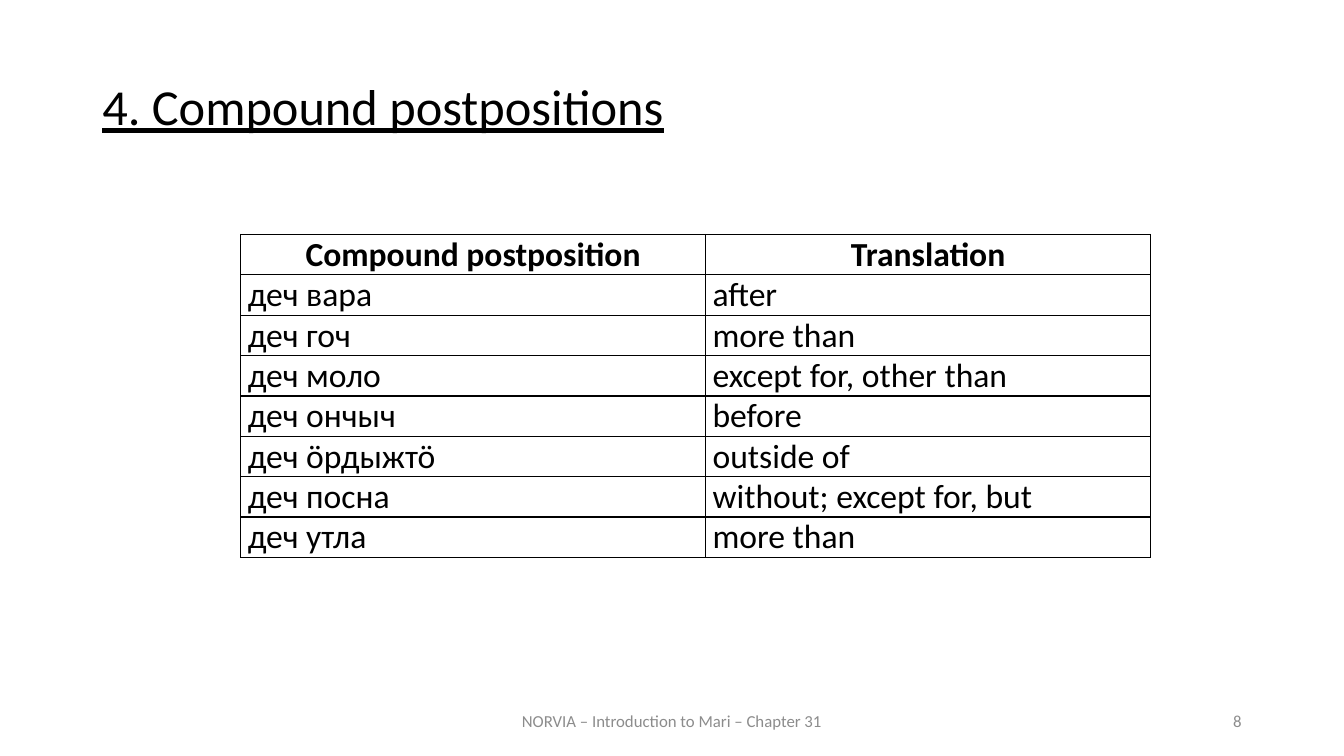
from lxml.etree import SubElement
from pptx import Presentation
from pptx.dml.color import RGBColor
from pptx.enum.text import MSO_ANCHOR, PP_ALIGN
from pptx.oxml.ns import qn
from pptx.util import Pt

BLACK, GREY = "000000", "8C8C8C"
TITLE = "4. Compound postpositions"
FOOT = "NORVIA – Introduction to Mari – Chapter 31"
PAGE = "8"
HEAD = ("Compound postposition", "Translation")
ROWS = [
    ("деч вара", "after"),
    ("деч гоч", "more than"),
    ("деч моло", "except for, other than"),
    ("деч ончыч", "before"),
    ("деч ӧрдыжтӧ", "outside of"),
    ("деч посна", "without; except for, but"),
    ("деч утла", "more than"),
]
COLS = (332, 318)
LEFT, TOP, ROW = 172, 167.5, 28.8
LABELS = [
    (TITLE, (66, 55, 828, 60), MSO_ANCHOR.TOP, BLACK,
     {"size": Pt(36), "underline": True},
     {"alignment": PP_ALIGN.JUSTIFY, "line_spacing": 0.9, "space_before": Pt(12)}),
    (FOOT, (318, 500.5, 324, 28.8), MSO_ANCHOR.MIDDLE, GREY,
     {"size": Pt(12)}, {"alignment": PP_ALIGN.CENTER}),
    (PAGE, (678, 500.5, 216, 28.8), MSO_ANCHOR.MIDDLE, GREY,
     {"size": Pt(12)}, {"alignment": PP_ALIGN.RIGHT}),
]
PADS = {"margin_left": Pt(5), "margin_right": Pt(5),
        "margin_top": Pt(0), "margin_bottom": Pt(0)}


def color(target, code):
    target.rgb = RGBColor.from_string(code)


def apply(item, form):
    for name, value in form.items():
        setattr(item, name, value)


def write(frame, text, code, font, para):
    line = frame.paragraphs[0]
    apply(line, para)
    run = line.add_run()
    run.text = text
    apply(run.font, {"name": "Calibri", **font})
    color(run.font.color, code)


def label(slide, text, box, anchor, code, font, para):
    frame = slide.shapes.add_textbox(*map(Pt, box)).text_frame
    apply(frame, {"word_wrap": True, "vertical_anchor": anchor})
    write(frame, text, code, font, para)


def border(cell):
    props = cell._tc.get_or_add_tcPr()
    for side in ("lnL", "lnR", "lnT", "lnB"):
        edge = SubElement(props, qn("a:" + side), w=str(Pt(1)))
        fill = SubElement(edge, qn("a:solidFill"))
        SubElement(fill, qn("a:srgbClr"), val=BLACK)


def grid(slide):
    data = [HEAD] + ROWS
    frame = slide.shapes.add_table(
        len(data), len(COLS), Pt(LEFT), Pt(TOP), Pt(sum(COLS)), Pt(ROW * len(data)))
    table = frame.table
    apply(table, {"first_row": False, "horz_banding": False})
    for col, width in zip(table.columns, COLS):
        col.width = Pt(width)
    for r, words in enumerate(data):
        table.rows[r].height = Pt(ROW)
        align = PP_ALIGN.JUSTIFY if r else PP_ALIGN.CENTER
        for c, text in enumerate(words):
            cell = table.cell(r, c)
            apply(cell, PADS)
            border(cell)
            cell.fill.background()
            write(cell.text_frame, text, BLACK,
                  {"size": Pt(24), "bold": r == 0}, {"alignment": align})


def main():
    deck = Presentation()
    apply(deck, {"slide_width": Pt(960), "slide_height": Pt(540)})
    slide = deck.slides.add_slide(deck.slide_layouts[6])
    for entry in LABELS:
        label(slide, *entry)
    grid(slide)
    deck.save("out.pptx")


if __name__ == "__main__":
    main()
